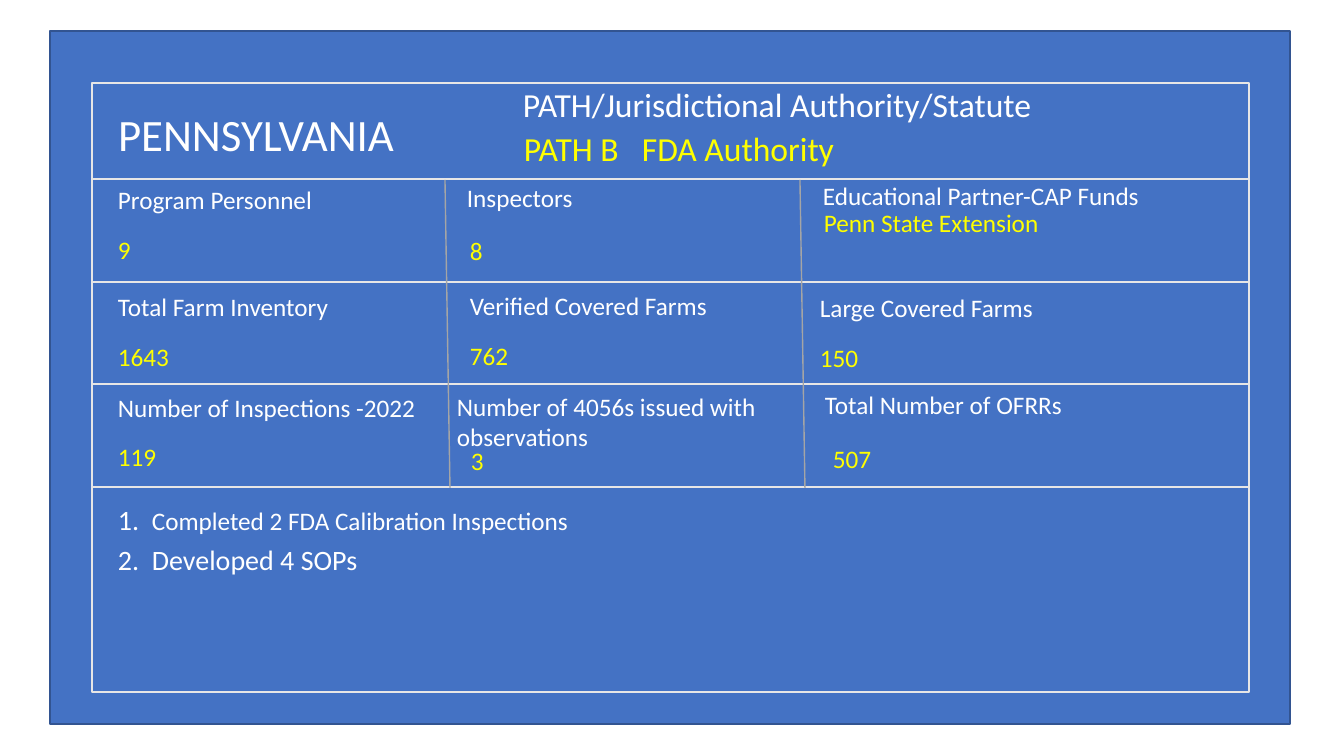
"""Build the Pennsylvania produce-safety programme summary slide."""
from lxml import etree
from pptx import Presentation
from pptx.dml.color import RGBColor
from pptx.enum.shapes import MSO_CONNECTOR, MSO_SHAPE
from pptx.enum.text import MSO_ANCHOR, MSO_AUTO_SIZE, PP_ALIGN
from pptx.oxml.ns import qn
from pptx.util import Emu, Pt

RECTANGLE = MSO_SHAPE.RECTANGLE
STRAIGHT = MSO_CONNECTOR.STRAIGHT
TOP = MSO_ANCHOR.TOP
LEFT = PP_ALIGN.LEFT
FIT = MSO_AUTO_SIZE.SHAPE_TO_FIT_TEXT

PX = 12192000 / 1344
BLUE, WHITE, YELLOW = "4472C4", "FFFFFF", "FFFF00"
FRAME, RULE, DIVIDER = "325491", "E7E6E6", "A5A5A5"


def paint(color_format, color):
    color_format.rgb = RGBColor.from_string(color)


def write(box, bounds, text, size, color):
    box.left, box.top, box.width, box.height = [Emu(round(n * PX)) for n in bounds]
    frame = box.text_frame
    frame.text = text
    frame.word_wrap = True
    frame.auto_size = FIT
    frame.vertical_anchor = TOP
    for para in frame.paragraphs:
        para.alignment = LEFT
        para.line_spacing = 1.0
        for span in para.runs:
            span.font.name = "Calibri"
            span.font.size = Pt(size)
            paint(span.font.color, color)
    return box


deck = Presentation()
deck.slide_width, deck.slide_height = Emu(12192000), Emu(6858000)
page = deck.slides.add_slide(deck.slide_layouts[5])

panels = [(50, 31, 1240, 693, FRAME)]
row_edges = [83, 179, 282, 384, 487, 692]
for top, bottom in zip(row_edges, row_edges[1:]):
    panels.append((92, top, 1157, bottom - top, RULE))
for *bounds, outline in panels:
    panel = page.shapes.add_shape(RECTANGLE, *[Emu(round(n * PX)) for n in bounds])
    panel.shadow.inherit = False
    panel.fill.solid()
    paint(panel.fill.fore_color, BLUE)
    panel.line.width = Pt(1)
    paint(panel.line.color, outline)

title = page.shapes.title
title.element.getparent().append(title.element)
write(title, (108, 102, 491, 65), "PENNSYLVANIA", 32, WHITE)

for start_x, end_x in [(800, 805), (445, 450)]:
    ends = [Emu(round(n * PX)) for n in (start_x, 180, end_x, 488)]
    divider = page.shapes.add_connector(STRAIGHT, *ends)
    divider.line.width = Pt(1)
    paint(divider.line.color, DIVIDER)
    etree.SubElement(divider.element.spPr, qn("a:effectLst"))

entries = [
    (513, 79, 687, "PATH/Jurisdictional Authority/Statute", 24, WHITE),
]
facts = [
    ("Program Personnel", 108, 179, "9", 108, 229),
    ("Inspectors", 457, 177, "8", 460, 230),
    ("Educational Partner-CAP Funds", 813, 175, "Penn State Extension", 814, 202),
    ("Total Farm Inventory", 108, 286, "1643", 108, 336),
    ("Verified Covered Farms", 460, 285, "762", 460, 335),
    ("Large Covered Farms", 810, 287, "150", 810, 337),
    ("Number of Inspections -2022", 108, 387, "119", 108, 436),
    ("Number of 4056s issued with observations", 447, 386, "3", 461, 440),
    ("Total Number of OFRRs", 815, 384, "507", 823, 438),
]
for label, label_x, label_y, value, value_x, value_y in facts:
    entries.append((label_x, label_y, 340, label, 18, WHITE))
    entries.append((value_x, value_y, 340, value, 18, YELLOW))
for left, top, width, text, size, color in entries:
    box = page.shapes.add_textbox(0, 0, 0, 0)
    write(box, (left, top, width, 50 if size == 24 else 42), text, size, color)

authority = page.shapes.add_textbox(0, 0, 0, 0)
write(authority, (514, 123, 719, 50), "PATH B\tFDA Authority", 24, YELLOW)
properties = authority.text_frame.paragraphs[0]._p.get_or_add_pPr()
tabs = etree.SubElement(properties, qn("a:tabLst"))
etree.SubElement(tabs, qn("a:tab"), pos=str(round(118 * PX)), algn="l")

notes = page.shapes.add_textbox(0, 0, 0, 0)
achievements = "Completed 2 FDA Calibration Inspections\nDeveloped 4 SOPs"
write(notes, (108, 500, 1130, 82), achievements, 20, WHITE)
first, second = notes.text_frame.paragraphs
for para, number_size in [(first, "111000"), (second, "100000")]:
    properties = para._p.get_or_add_pPr()
    properties.set("marL", str(round(34 * PX)))
    properties.set("indent", str(round(-34 * PX)))
    etree.SubElement(properties, qn("a:buSzPct"), val=number_size)
    etree.SubElement(properties, qn("a:buFont"), typeface="Calibri")
    etree.SubElement(properties, qn("a:buAutoNum"), type="arabicPeriod")
first.runs[0].font.size = Pt(18)
second.space_before = Pt(5)

deck.save("out.pptx")
